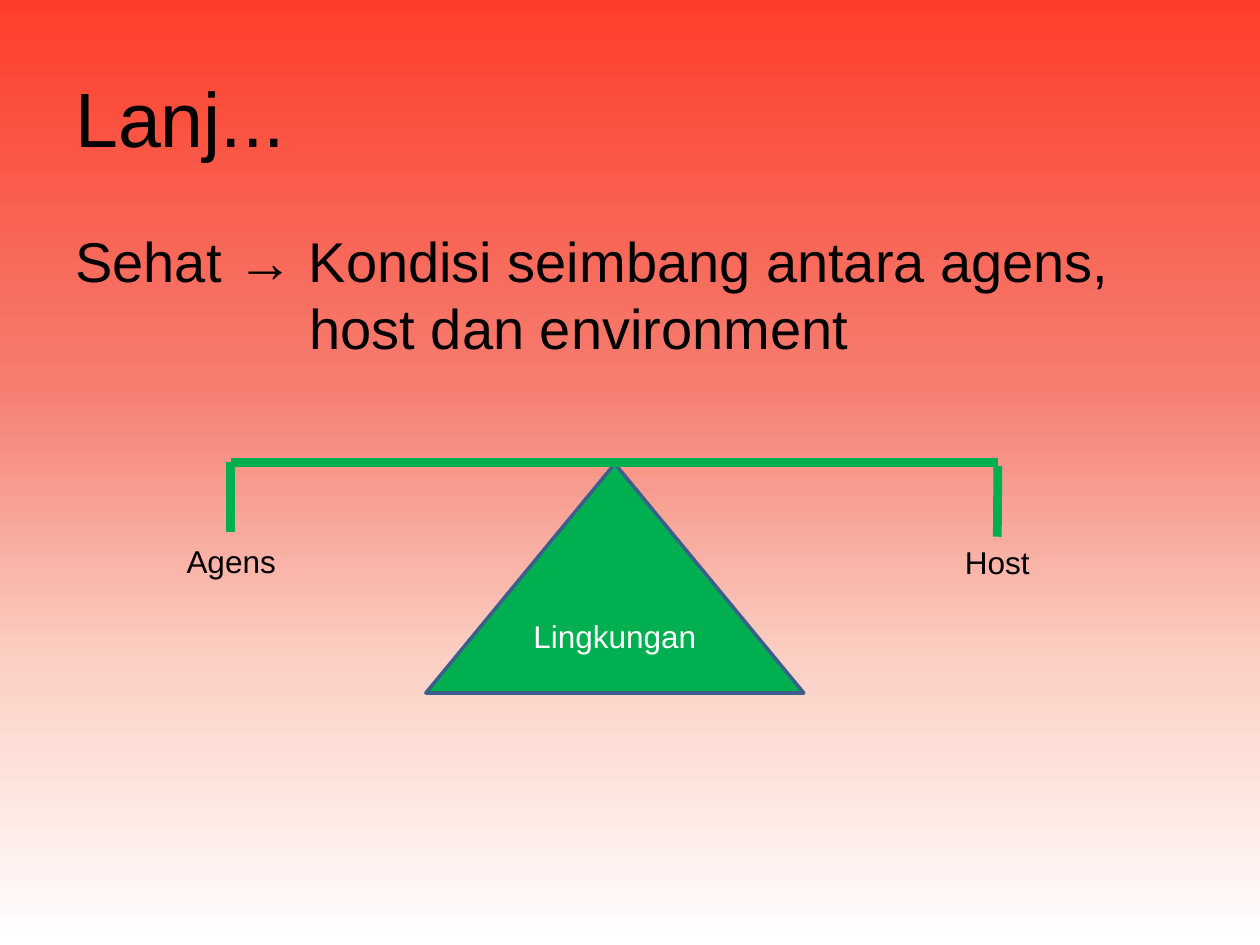
"""Build a slide showing health as a balance of agent, host and environment."""
from lxml import etree
from pptx import Presentation
from pptx.dml.color import RGBColor
from pptx.enum.shapes import MSO_CONNECTOR, MSO_SHAPE
from pptx.enum.text import MSO_ANCHOR, MSO_AUTO_SIZE, PP_ALIGN
from pptx.oxml.ns import qn
from pptx.util import Inches, Pt

STRAIGHT = MSO_CONNECTOR.STRAIGHT
TRIANGLE = MSO_SHAPE.ISOSCELES_TRIANGLE
MIDDLE = MSO_ANCHOR.MIDDLE
GROW = MSO_AUTO_SIZE.SHAPE_TO_FIT_TEXT
LEFT, CENTER = PP_ALIGN.LEFT, PP_ALIGN.CENTER
BLACK = RGBColor(0x00, 0x00, 0x00)
WHITE = RGBColor(0xFF, 0xFF, 0xFF)
GREEN = RGBColor(0x00, 0xB0, 0x50)
BLUE = RGBColor(0x3A, 0x5F, 0x8C)
BACKGROUND = [
    (0, RGBColor(0xFE, 0x3E, 0x2A)),
    (40, RGBColor(0xF5, 0x7C, 0x6F)),
    (70, RGBColor(0xFC, 0xD0, 0xC4)),
    (100, WHITE),
]


def write(box, text, size, color=BLACK, align=LEFT):
    box.text_frame.word_wrap = True
    para = box.text_frame.paragraphs[0]
    para.text = text
    para.alignment = align
    para.font.name = "Arial"
    para.font.size = Pt(size)
    para.font.color.rgb = color
    return para


def add_bar(shapes, x1, y1, x2, y2):
    bar = shapes.add_connector(STRAIGHT, Inches(x1), Inches(y1), Inches(x2), Inches(y2))
    bar.line.color.rgb = GREEN
    bar.line.width = Pt(5)
    etree.SubElement(bar._element.spPr, qn("a:effectLst"))
    return bar


deck = Presentation()
deck.slide_width, deck.slide_height = Inches(10), Inches(7.5)
page = deck.slides.add_slide(deck.slide_layouts[6])
shapes = page.shapes

fill = page.background.fill
fill.gradient()
fill.gradient_angle = 270
stops = page._element.find(".//" + qn("a:gsLst"))
for stop in list(stops):
    stops.remove(stop)
for percent, color in BACKGROUND:
    stop = etree.SubElement(stops, qn("a:gs"), pos=str(percent * 1000))
    etree.SubElement(stop, qn("a:srgbClr"), val=str(color))

title = shapes.add_textbox(Inches(0.5), Inches(0.3), Inches(9), Inches(1.25))
title.text_frame.vertical_anchor = MIDDLE
write(title, "Lanj...", 44)

body = shapes.add_textbox(Inches(0.5), Inches(1.75), Inches(9), Inches(1.33))
para = write(body, "Sehat → Kondisi seimbang antara agens, host dan environment", 32)
para.space_before = Pt(6.4)
indent = Inches(1.86)
para._p.get_or_add_pPr().set("marL", str(indent))
para._p.get_or_add_pPr().set("indent", str(-indent))

pivot = shapes.add_shape(TRIANGLE, Inches(3.38), Inches(3.68), Inches(3), Inches(1.82))
pivot.shadow.inherit = False
pivot.fill.solid()
pivot.fill.fore_color.rgb = GREEN
pivot.line.color.rgb = BLUE
pivot.line.width = Pt(2)
pivot.text_frame.vertical_anchor = MIDDLE
write(pivot, "Lingkungan", 18, WHITE, CENTER)

add_bar(shapes, 1.83, 3.67, 7.92, 3.67)
for text, x, top, bottom, left, label_top in [
    ("Agens", 1.83, 3.67, 4.22, 0.75, 4.25),
    ("Host", 7.92, 3.7, 4.26, 6.83, 4.26),
]:
    arm = add_bar(shapes, x, top, x, bottom)
    label = shapes.add_textbox(Inches(left), Inches(label_top), Inches(2.17), Inches(0.4))
    label.text_frame.auto_size = GROW
    write(label, text, 18, align=CENTER)
    if bottom == label_top:
        arm.end_connect(label, 0)

deck.save("out.pptx")
